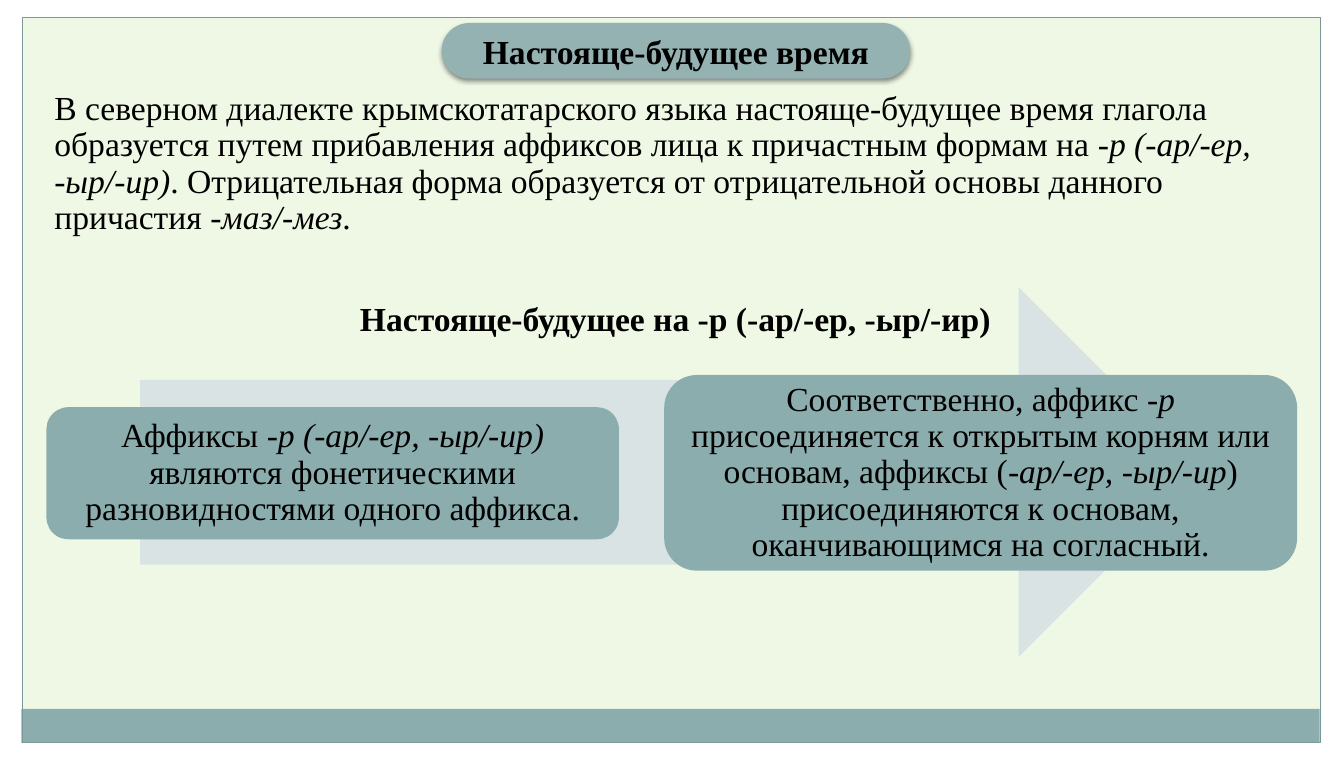
import pptx
import pptx.util
import pptx.oxml
import pptx.oxml.ns
import pptx.dml.color
import pptx.enum.shapes
import pptx.enum.text

Cm, Pt = pptx.util.Cm, pptx.util.Pt
Kind = pptx.enum.shapes.MSO_SHAPE
Align = pptx.enum.text.PP_ALIGN
Anchor = pptx.enum.text.MSO_ANCHOR
hue = pptx.dml.color.RGBColor.from_string
TEAL = "8CADAE"

deck = pptx.Presentation()
deck.slide_width, deck.slide_height = Cm(33.87), Cm(19.15)
slide = deck.slides.add_slide(deck.slide_layouts[6])
slide.background.fill.solid()
slide.background.fill.fore_color.rgb = hue("EFF8E5")


def draw(kind, box, fill=None, line=None):
    shape = slide.shapes.add_shape(kind, *map(Cm, box))
    shape.shadow.inherit = False
    for part, color in ((shape.fill, fill), (shape.line.fill, line)):
        if color:
            part.solid()
            part.fore_color.rgb = hue(color)
        else:
            part.background()
    return shape


# Asterisks enclose italic words
def write(shape, text, frame, para, bold=False):
    for name, value in frame.items():
        setattr(shape.text_frame, name, value)
    line = shape.text_frame.paragraphs[0]
    for name, value in para.items():
        setattr(line, name, value)
    for i, piece in enumerate(text.split("*")):
        run = line.add_run()
        run.text = piece
        style = {"name": "Times New Roman", "size": Pt(24),
                 "bold": bold, "italic": i % 2 == 1}
        for name, value in style.items():
            setattr(run.font, name, value)
        run.font.color.rgb = hue("000000")


# White margins
for box in ((0, 18.72, 33.87, 0.43), (0, 0, 33.87, 0.43),
            (33.3, 0, 0.57, 19.15), (0, 0, 0.56, 19.15)):
    draw(Kind.RECTANGLE, box, "FFFFFF")

# Footer band and page frame
draw(Kind.RECTANGLE, (0.54, 17.86, 32.72, 0.86), TEAL)
border = draw(Kind.RECTANGLE, (0.56, 0.43, 32.72, 18.29), line="7C999A")
border.line.width = Pt(0.75)

# Title pill with a soft shadow
title = draw(Kind.ROUNDED_RECTANGLE, (11.13, 0.58, 11.81, 1.4), "95B2B3")
title.adjustments[0] = 0.5
write(title, "Настояще-будущее время", {"vertical_anchor": Anchor.MIDDLE},
      {"alignment": Align.CENTER}, True)
glow = title.element.spPr.find(pptx.oxml.ns.qn("a:effectLst"))
glow.append(pptx.oxml.parse_xml(
    f'<a:outerShdw {pptx.oxml.ns.nsdecls("a")} blurRad="{Pt(4)}" dist="{Pt(2)}" '
    'dir="5400000" rotWithShape="0"><a:srgbClr val="000000">'
    '<a:alpha val="45000"/></a:srgbClr></a:outerShdw>'))

# Introduction
intro = slide.shapes.add_textbox(Cm(1.12), Cm(2.18), Cm(31.52), Cm(3.99))
write(intro, "В северном диалекте крымскотатарского языка настояще-будущее время "
      "глагола образуется путем прибавления аффиксов лица к причастным формам на "
      "*-р (-ар/-ер, -ыр/-ир)*. Отрицательная форма образуется от отрицательной "
      "основы данного причастия *-маз/-мез*.",
      {"word_wrap": True}, {"line_spacing": 0.9, "space_before": Pt(11.9)})

# Heading of the scheme
head = slide.shapes.add_textbox(Cm(8.74), Cm(7.37), Cm(16.56), Cm(1.27))
write(head, "Настояще-будущее на -р (-ар/-ер, -ыр/-ир)",
      {"word_wrap": False,
       "auto_size": pptx.enum.text.MSO_AUTO_SIZE.SHAPE_TO_FIT_TEXT},
      {"alignment": Align.CENTER}, True)

# Arrow with two cards
draw(Kind.RIGHT_ARROW, (3.53, 7.24, 26.8, 9.32), "DAE3E3")
cards = (
    ((1.17, 10.26, 14.43, 3.33), 0.41,
     "Аффиксы *-р (-ар/-ер, -ыр/-ир)* являются фонетическими разновидностями "
     "одного аффикса."),
    ((16.74, 9.45, 15.95, 4.93), 0.5,
     "Соответственно, аффикс *-р* присоединяется к открытым корням или основам, "
     "аффиксы (*-ар/-ер, -ыр/-ир*) присоединяются к основам, оканчивающимся "
     "на согласный."),
)
for box, pad, text in cards:
    card = draw(Kind.ROUNDED_RECTANGLE, box, TEAL)
    frame = {"word_wrap": True, "vertical_anchor": Anchor.MIDDLE}
    for side in ("left", "right", "top", "bottom"):
        frame[f"margin_{side}"] = Cm(pad)
    # The rounded corners already inset the text area
    inset = 0.29 * card.adjustments[0] * box[3]
    for side in ("left", "right", "top", "bottom"):
        frame[f"margin_{side}"] = Cm(max(0, round(pad - inset, 2)))
    write(card, text, frame, {"alignment": Align.CENTER, "line_spacing": 0.9})

deck.save("out.pptx")
